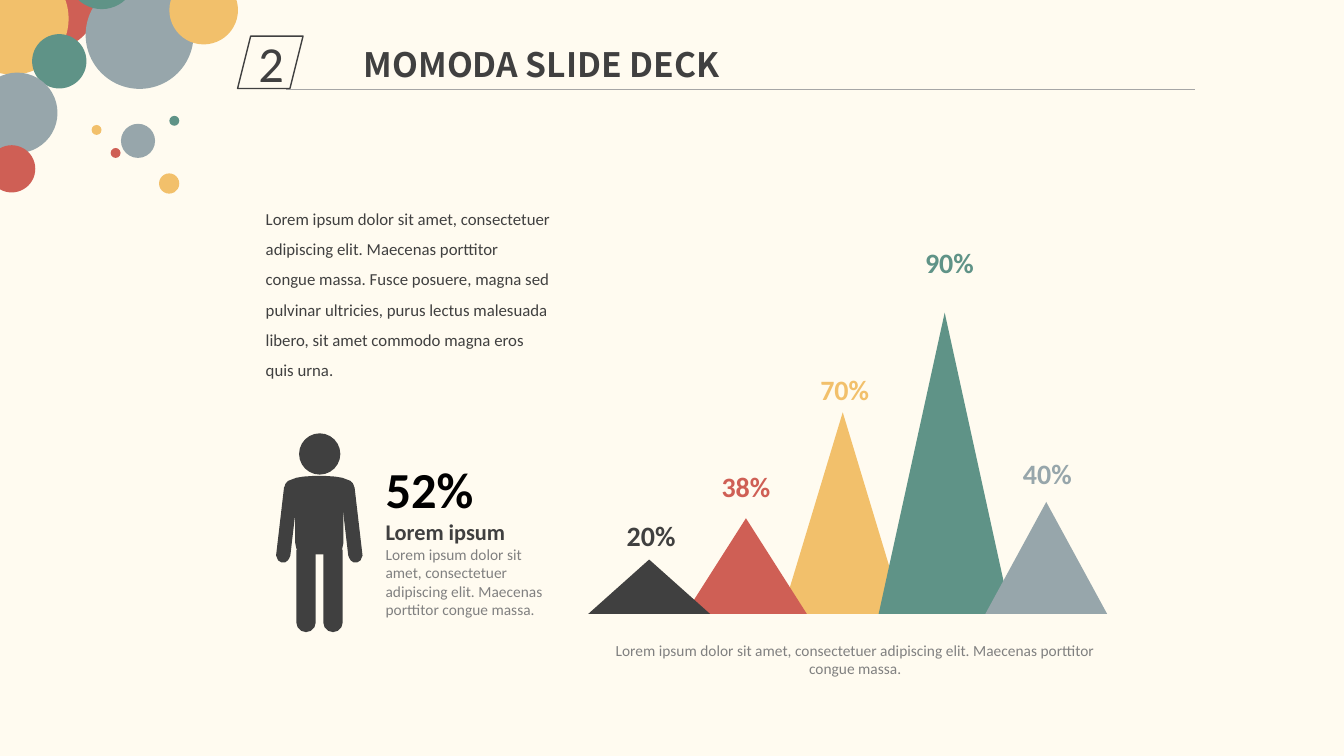
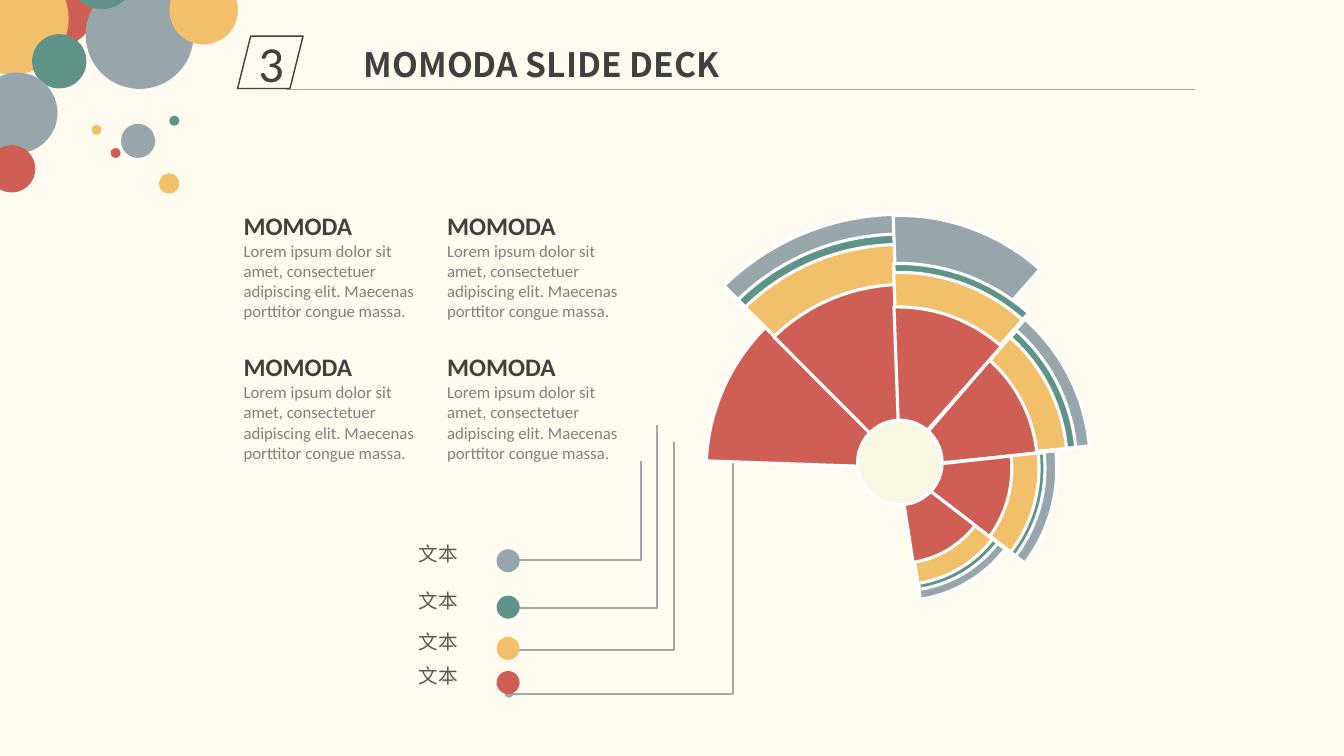
from lxml import etree
from pptx import Presentation
from pptx.dml.color import RGBColor
from pptx.enum.shapes import MSO_CONNECTOR, MSO_SHAPE
from pptx.enum.text import MSO_ANCHOR, MSO_AUTO_SIZE, PP_ALIGN
from pptx.oxml.ns import qn
from pptx.util import Cm, Pt

CREAM = RGBColor(0xFF, 0xFB, 0xF0)
HUB = RGBColor(0xF8, 0xF7, 0xE2)
WHITE = RGBColor(0xFF, 0xFF, 0xFF)
BLACK = RGBColor(0x00, 0x00, 0x00)
DARK = RGBColor(0x40, 0x40, 0x40)
LABEL = RGBColor(0x59, 0x59, 0x59)
MUTED = RGBColor(0x80, 0x80, 0x80)
RULE = RGBColor(0xA6, 0xA6, 0xA6)
RED = RGBColor(0xCF, 0x5F, 0x55)
YELLOW = RGBColor(0xF2, 0xC0, 0x6B)
GREEN = RGBColor(0x5F, 0x93, 0x87)
GREY = RGBColor(0x97, 0xA6, 0xAB)

ELLIPSE = MSO_SHAPE.OVAL
TRIANGLE = MSO_SHAPE.ISOSCELES_TRIANGLE
PARALLELOGRAM = MSO_SHAPE.PARALLELOGRAM
ROUNDED = MSO_SHAPE.ROUNDED_RECTANGLE
PIE = MSO_SHAPE.PIE
STRAIGHT = MSO_CONNECTOR.STRAIGHT
ELBOW = MSO_CONNECTOR.ELBOW
MIDDLE = MSO_ANCHOR.MIDDLE
LEFT = PP_ALIGN.LEFT
CENTER = PP_ALIGN.CENTER
GROW = MSO_AUTO_SIZE.SHAPE_TO_FIT_TEXT
FIXED = MSO_AUTO_SIZE.NONE

BODY_FONT = "Calibri"
HEAD_FONT = "Noto Sans CJK SC"
TITLE_ONLY = 5

TITLE = "MOMODA SLIDE DECK"
SHORT = ("Lorem ipsum dolor sit amet, consectetuer adipiscing elit. "
         "Maecenas porttitor congue massa.")
LONG = SHORT + (" Fusce posuere, magna sed pulvinar ultricies, purus lectus "
                "malesuada libero, sit amet commodo magna eros quis urna.")

BUBBLES = [
    (RED, 0.1, -1.12, 2.36),
    (YELLOW, -1.09, -0.94, 2.82),
    (GREEN, 0.81, 0.86, 1.37),
    (GREY, -0.58, 1.83, 2.03),
    (GREY, 2.16, -0.48, 2.72),
    (GREEN, 1.7, -1.5, 1.73),
    (RED, -0.3, 3.66, 1.19),
    (GREY, 3.05, 3.12, 0.86),
    (RED, 2.79, 3.73, 0.25),
    (YELLOW, 2.31, 3.15, 0.25),
    (GREEN, 4.27, 2.92, 0.25),
    (YELLOW, 4.01, 4.37, 0.51),
    (YELLOW, 4.27, -0.61, 1.73),
]

BODY_AXIS = 8.05
ARM = [
    (7.32, 14.0), (7.29, 14.07), (7.26, 14.12), (7.19, 14.17),
    (7.09, 14.17), (7.01, 14.12), (6.99, 14.07), (6.96, 14.0),
    (7.16, 12.29), (7.19, 12.22), (7.21, 12.17), (7.29, 12.12),
    (7.39, 12.12), (7.47, 12.17), (7.49, 12.22), (7.52, 12.29),
]
HALF_TORSO = [
    (7.95, 11.99), (7.65, 12.01), (7.47, 12.04), (7.26, 12.12),
    (7.19, 12.22), (7.19, 12.29), (7.26, 12.37), (7.44, 12.5),
    (7.44, 13.67), (7.47, 13.82), (7.54, 13.89), (7.75, 13.97),
]

BASELINE = 15.47
PEAKS = [
    ("70%", YELLOW, 19.71, 3.07, 5.08, 20.42, 9.25),
    ("38%", RED, 17.27, 3.07, 2.41, 17.93, 11.71),
    ("20%", DARK, 14.83, 3.07, 1.37, 15.54, 12.93),
    ("90%", GREEN, 22.15, 3.33, 7.59, 23.06, 6.05),
    ("40%", GREY, 24.84, 3.07, 2.82, 25.53, 11.38),
]

RINGS = [GREY, GREEN, YELLOW, RED]
PIE_ANGLES = (130.5, 156.71)
WEDGES = [
    (324.5, 0.99, [(22.85, 11.79, 10.13)]),
    (7.6, 0.99, [(22.69, 11.65, 12.62), (22.69, 11.65, 11.61),
                 (22.69, 11.66, 11.1), (22.77, 11.76, 9.27)]),
    (50.4, 0.99, [(22.71, 10.74, 10.67), (22.71, 11.52, 9.8),
                  (22.7, 11.53, 9.37), (22.68, 11.63, 7.82)]),
    (93.3, 0.99, [(22.68, 11.7, 9.7), (22.71, 11.7, 8.94),
                  (22.68, 11.71, 8.53), (22.62, 11.77, 7.14)]),
    (136.1, 1, [(22.69, 11.8, 7.9), (22.71, 11.81, 7.26),
                (22.71, 11.8, 6.96), (22.61, 11.81, 5.79)]),
    (180, 1, [(22.69, 11.8, 6.68), (22.71, 11.81, 6.15),
              (22.69, 11.8, 5.87), (22.64, 11.75, 4.9)]),
]

LEGEND = [
    (GREY, 13.54, 14.12, 16.15, 11.61),
    (GREEN, 14.71, 15.32, 16.56, 10.72),
    (YELLOW, 15.75, 16.38, 16.99, 11.15),
    (RED, 16.61, 17.48, 18.47, 10.74),
]


def write(tf, text, *, size, color=DARK, font=BODY_FONT, bold=False,
          align=LEFT, spacing=None):
    p = tf.add_paragraph() if tf.text else tf.paragraphs[0]
    p.alignment = align
    if spacing:
        p.line_spacing = spacing
    r = p.add_run()
    r.text = text
    r.font.size = Pt(size)
    r.font.bold = bold
    r.font.color.rgb = color
    r.font.name = font
    ea = etree.SubElement(r._r.get_or_add_rPr(), qn("a:ea"))
    ea.set("typeface", font)


def mirror(points):
    return [(2 * BODY_AXIS - x, y) for x, y in points]


class Deck:
    def __init__(self):
        self.prs = Presentation()
        self.prs.slide_width = Cm(33.88)
        self.prs.slide_height = Cm(19.05)
        fill = self.prs.slide_master.background.fill
        fill.solid()
        fill.fore_color.rgb = CREAM
        self.s = None

    def new_slide(self, number):
        self.s = self.prs.slides.add_slide(self.prs.slide_layouts[TITLE_ONLY])
        for color, x, y, size in BUBBLES:
            self.shape(ELLIPSE, x, y, size, size, fill=color)
        self.line(STRAIGHT, 7.21, 2.24, 30.12, 2.24, 0.5)
        sp = self.shape(PARALLELOGRAM, 5.99, 0.91, 1.65, 1.32,
                        line=DARK, weight=1)
        sp.text_frame.vertical_anchor = MIDDLE
        write(sp.text_frame, number, size=36, align=CENTER)
        self.title(TITLE)

    def title(self, text):
        sp = self.s.shapes.title
        sp.left, sp.top, sp.width, sp.height = map(Cm, (8.92, 0.97, 13.03, 1.27))
        tf = sp.text_frame
        tf.word_wrap = True
        tf.auto_size = FIXED
        tf.vertical_anchor = MIDDLE
        write(tf, text, size=24, font=HEAD_FONT, bold=True)

    def paint(self, sp, fill, line=None, weight=1):
        sp.shadow.inherit = False
        if fill is None:
            sp.fill.background()
        else:
            sp.fill.solid()
            sp.fill.fore_color.rgb = fill
        if line is None:
            sp.line.fill.background()
        else:
            sp.line.color.rgb = line
            sp.line.width = Pt(weight)
        return sp

    def shape(self, kind, x, y, w, h, fill=None, line=None, weight=1):
        sp = self.s.shapes.add_shape(kind, Cm(x), Cm(y), Cm(w), Cm(h))
        return self.paint(sp, fill, line, weight)

    def outline(self, points, fill):
        pts = [(Cm(x), Cm(y)) for x, y in points]
        builder = self.s.shapes.build_freeform(*pts[0])
        builder.add_line_segments(pts[1:], close=True)
        return self.paint(builder.convert_to_shape(), fill)

    def text(self, x, y, w, h, wrap=True):
        sp = self.s.shapes.add_textbox(Cm(x), Cm(y), Cm(w), Cm(h))
        tf = sp.text_frame
        tf.word_wrap = wrap
        tf.auto_size = GROW
        return tf

    def line(self, kind, x1, y1, x2, y2, weight):
        cx = self.s.shapes.add_connector(kind, Cm(x1), Cm(y1), Cm(x2), Cm(y2))
        cx.line.color.rgb = RULE
        cx.line.width = Pt(weight)
        etree.SubElement(cx._element.spPr, qn("a:effectLst"))
        return cx

    def leader(self, x1, y1, x2, y2):
        cx = self.line(ELBOW, x1, y1, x2, y2, 1.5)
        spPr = cx._element.spPr
        geom = spPr.find(qn("a:prstGeom"))
        av = geom.find(qn("a:avLst"))
        if av is None:
            av = etree.SubElement(geom, qn("a:avLst"))
        etree.SubElement(av, qn("a:gd"), name="adj1", fmla="val 100000")
        etree.SubElement(spPr.find(qn("a:ln")), qn("a:headEnd"), type="oval")

    def wedge(self, cx, cy, w, aspect, rotation, color):
        h = w * aspect
        sp = self.shape(PIE, cx - w / 2, cy - h / 2, w, h, color, WHITE, 2.25)
        sp.adjustments[0], sp.adjustments[1] = PIE_ANGLES
        sp.rotation = rotation

    def person(self):
        self.outline(ARM, DARK)
        self.outline(mirror(ARM), DARK)
        self.shape(ELLIPSE, 7.54, 10.92, 1.04, 1.04, fill=DARK)
        for x in (7.47, 8.15):
            leg = self.shape(ROUNDED, x, 13.64, 0.49, 2.29, fill=DARK)
            leg.adjustments[0] = 0.5
        self.outline(HALF_TORSO + mirror(HALF_TORSO)[::-1], DARK)


def peaks_slide(deck):
    deck.new_slide("2")
    deck.person()
    write(deck.text(6.45, 4.88, 7.7, 4.88), LONG, size=12, spacing=1.5)
    write(deck.text(9.47, 11.43, 2.74, 1.8, wrap=False), "52%",
          size=36, color=BLACK, bold=True)
    tf = deck.text(9.47, 12.93, 4.85, 2.82)
    write(tf, "Lorem ipsum", size=16, bold=True)
    write(tf, SHORT, size=11, color=MUTED)
    for label, color, x, w, h, label_x, label_y in PEAKS:
        deck.shape(TRIANGLE, x, BASELINE - h, w, h, fill=color)
        write(deck.text(label_x, label_y, 1.75, 1.12, wrap=False), label,
              size=20, color=color, bold=True, align=CENTER)
    write(deck.text(15.21, 16.03, 12.7, 1.19), SHORT,
          size=11, color=MUTED, align=CENTER)


def wheel_slide(deck):
    deck.new_slide("3")
    for color, text_y, line_y, corner_x, top in LEGEND:
        deck.leader(12.83, line_y, corner_x, top)
        deck.shape(ELLIPSE, 12.52, text_y + 0.3, 0.58, 0.58, fill=color)
        write(deck.text(10.31, text_y, 1.5, 0.86, wrap=False), "文本",
              size=14, color=LABEL, font=HEAD_FONT)
    for rotation, aspect, rings in WEDGES:
        for color, (cx, cy, w) in zip(RINGS[-len(rings):], rings):
            deck.wedge(cx, cy, w, aspect, rotation, color)
    deck.shape(ELLIPSE, 21.62, 10.59, 2.13, 2.13, HUB, WHITE, 2.25)
    for y in (5.18, 8.74):
        for x in (5.89, 11.02):
            tf = deck.text(x, y, 5, 3.07)
            write(tf, "MOMODA", size=18, bold=True)
            write(tf, SHORT, size=12, color=MUTED)


def main():
    deck = Deck()
    peaks_slide(deck)
    wheel_slide(deck)
    deck.prs.save("out.pptx")


if __name__ == "__main__":
    main()
